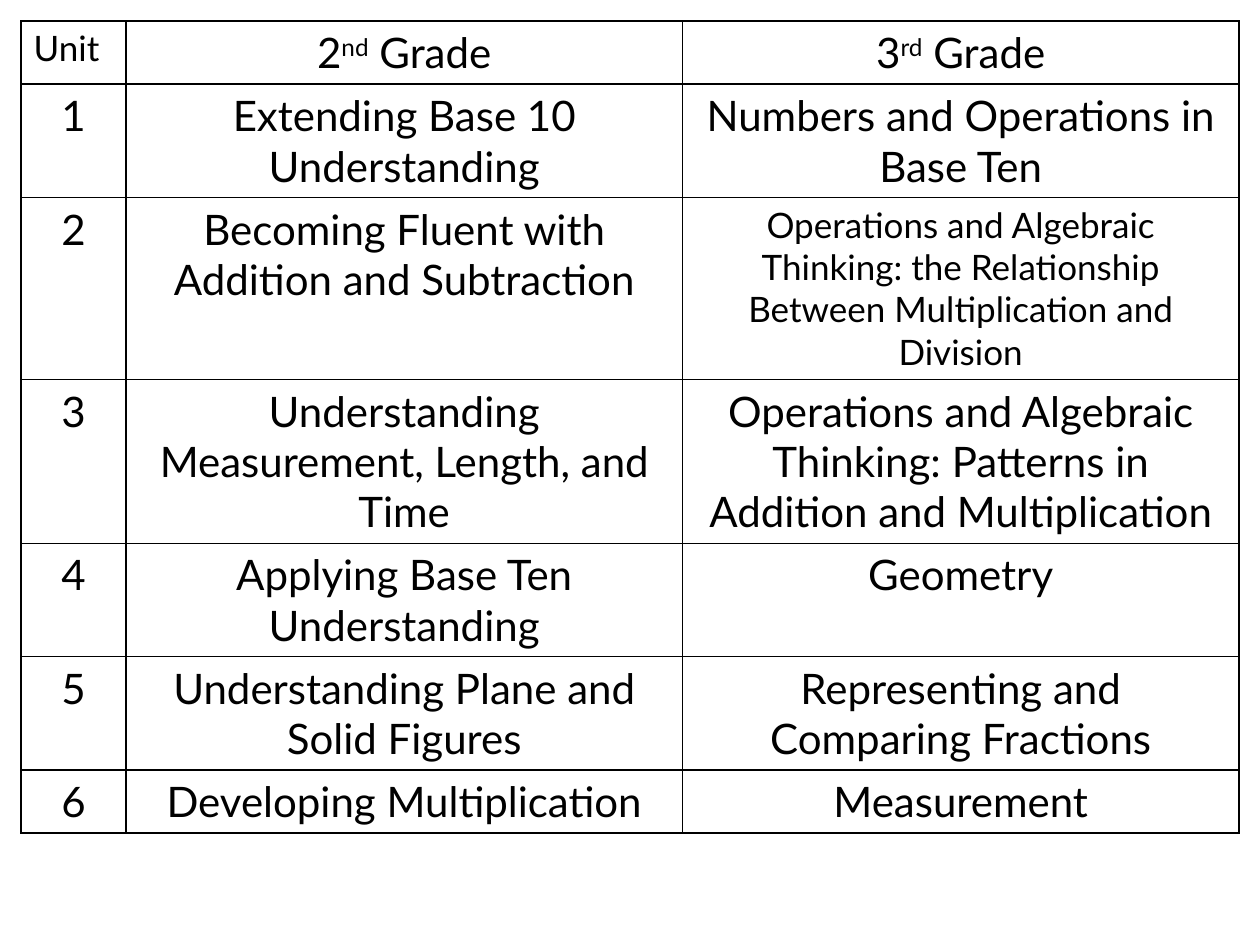
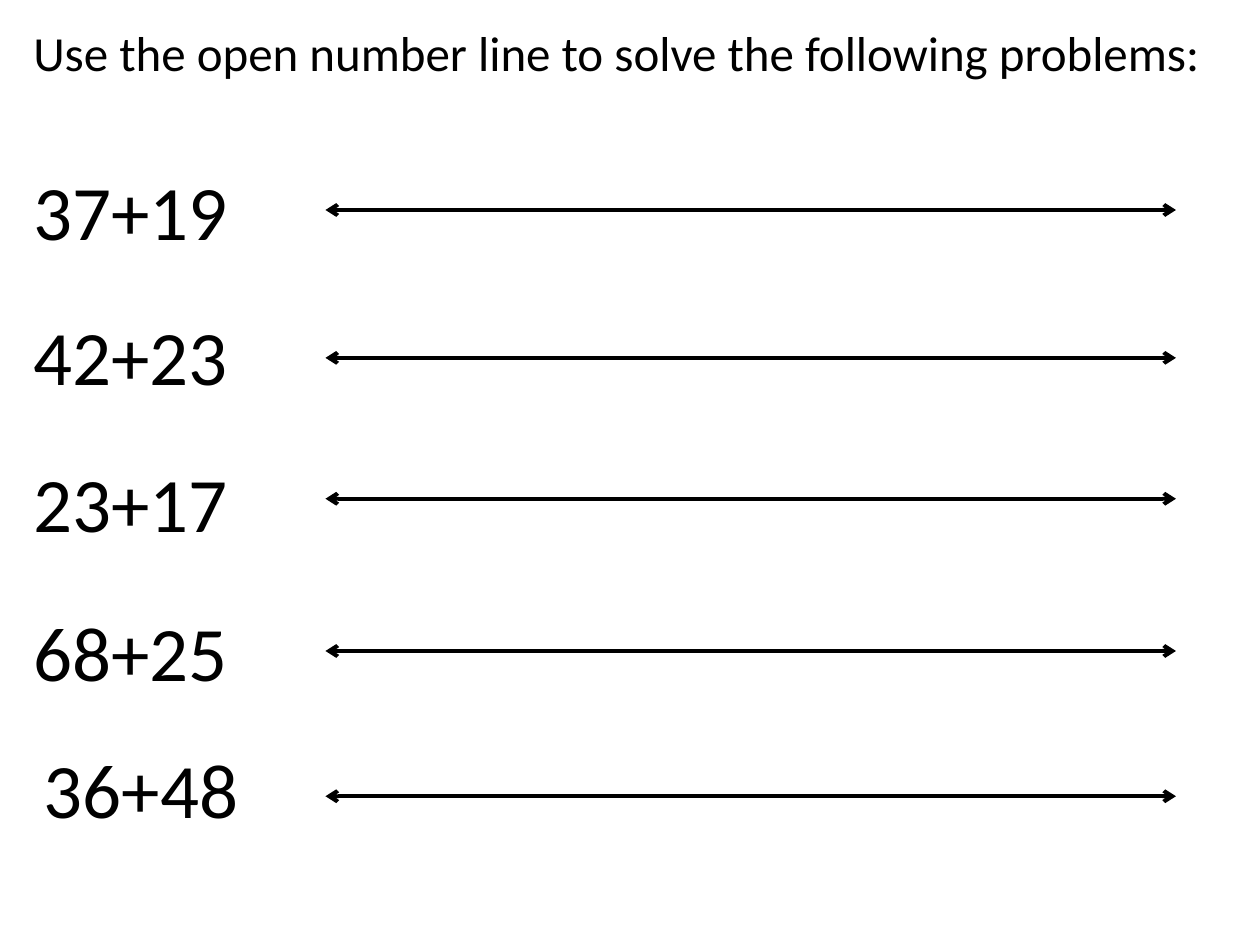
from lxml.etree import SubElement
from pptx import Presentation
from pptx.dml.color import RGBColor
from pptx.enum.shapes import MSO_CONNECTOR
from pptx.enum.text import MSO_AUTO_SIZE, PP_ALIGN
from pptx.oxml.ns import qn
from pptx.util import Pt

# Content
GRADES = [("2", "nd"), ("3", "rd")]
UNITS = [
    ("Extending Base 10 Understanding", "Numbers and Operations in Base Ten"),
    ("Becoming Fluent with Addition and Subtraction",
     "Operations and Algebraic Thinking: the Relationship Between Multiplication and Division"),
    ("Understanding Measurement, Length, and Time",
     "Operations and Algebraic Thinking: Patterns in Addition and Multiplication"),
    ("Applying Base Ten Understanding", "Geometry"),
    ("Understanding Plane and Solid Figures", "Representing and Comparing Fractions"),
    ("Developing Multiplication", "Measurement"),
]
INSTRUCTION = "Use the open number line to solve the following problems:"
# Sum, left and top of its label, height of its number line
PROBLEMS = [
    ("37+19", 12, 90, 120),
    ("42+23", 12, 173, 204.5),
    ("23+17", 12, 257, 285),
    ("68+25", 12, 342, 372),
    ("36+48", 18, 420, 455),
]

# Shared style
INK = "000000"
TABLE_FONT, PROBLEM_FONT = "Lato", "Calibri"
COLUMN_WIDTHS = [60, 318, 318]
ROW_HEIGHTS = [36, 64.5, 104, 93.5, 64.5, 64.5, 36]
LONG_TITLE = 80
LINE_START, LINE_END = 186, 672


def color(hex_code):
    return RGBColor.from_string(hex_code)


def style_run(run, font, size):
    run.font.name = font
    run.font.size = Pt(size)
    run.font.color.rgb = color(INK)


def add_borders(cell):
    properties = cell._tc.get_or_add_tcPr()
    for position, side in enumerate(("lnL", "lnR", "lnT", "lnB")):
        border = SubElement(properties, qn(f"a:{side}"), w=str(Pt(1)))
        fill = SubElement(border, qn("a:solidFill"))
        SubElement(fill, qn("a:srgbClr"), val=INK)
        properties.insert(position, border)


def fill_cell(cell, parts, size=24, align=PP_ALIGN.CENTER):
    paragraph = cell.text_frame.paragraphs[0]
    paragraph.alignment = align
    for part in parts:
        run = paragraph.add_run()
        run.text = part
        style_run(run, TABLE_FONT, size)
    cell.fill.background()
    add_borders(cell)
    return paragraph


def add_label(slide, text, left, top, width, height, size):
    label = slide.shapes.add_textbox(Pt(left), Pt(top), Pt(width), Pt(height))
    frame = label.text_frame
    frame.word_wrap = True
    frame.auto_size = MSO_AUTO_SIZE.SHAPE_TO_FIT_TEXT
    frame.text = text
    style_run(frame.paragraphs[0].runs[0], PROBLEM_FONT, size)


def add_number_line(slide, height):
    number_line = slide.shapes.add_connector(
        MSO_CONNECTOR.STRAIGHT, Pt(LINE_START), Pt(height), Pt(LINE_END), Pt(height))
    number_line.line.color.rgb = color(INK)
    number_line.line.width = Pt(2.25)
    outline = number_line.line._get_or_add_ln()
    for end in ("headEnd", "tailEnd"):
        SubElement(outline, qn(f"a:{end}"), type="arrow")
    SubElement(number_line._element.spPr, qn("a:effectLst"))


def build_units(slide):
    table = slide.shapes.add_table(
        len(ROW_HEIGHTS), len(COLUMN_WIDTHS), Pt(12), Pt(12),
        Pt(sum(COLUMN_WIDTHS)), Pt(sum(ROW_HEIGHTS))).table
    table.first_row = table.horz_banding = False
    for column, width in zip(table.columns, COLUMN_WIDTHS):
        column.width = Pt(width)
    for row, height in zip(table.rows, ROW_HEIGHTS):
        row.height = Pt(height)

    # Header row with raised ordinals
    fill_cell(table.cell(0, 0), ["Unit"], 20, PP_ALIGN.LEFT)
    for column, (number, ordinal) in enumerate(GRADES, 1):
        heading = fill_cell(table.cell(0, column), [number, ordinal, " Grade"])
        heading.runs[1].font._element.set("baseline", "30000")

    # One row per unit
    for unit, titles in enumerate(UNITS, 1):
        fill_cell(table.cell(unit, 0), [str(unit)])
        for column, title in enumerate(titles, 1):
            fill_cell(table.cell(unit, column), [title],
                      20 if len(title) > LONG_TITLE else 24)


def build_problems(slide):
    add_label(slide, INSTRUCTION, 12, 9.5, 701, 41, 28)
    for problem, left, top, line_height in PROBLEMS:
        add_label(slide, problem, left, top, 144, 60.5, 44)
        add_number_line(slide, line_height)


def main():
    deck = Presentation()
    deck.slide_width, deck.slide_height = Pt(720), Pt(540)
    for build in (build_units, build_problems):
        build(deck.slides.add_slide(deck.slide_layouts[6]))
    deck.save("out.pptx")


if __name__ == "__main__":
    main()
